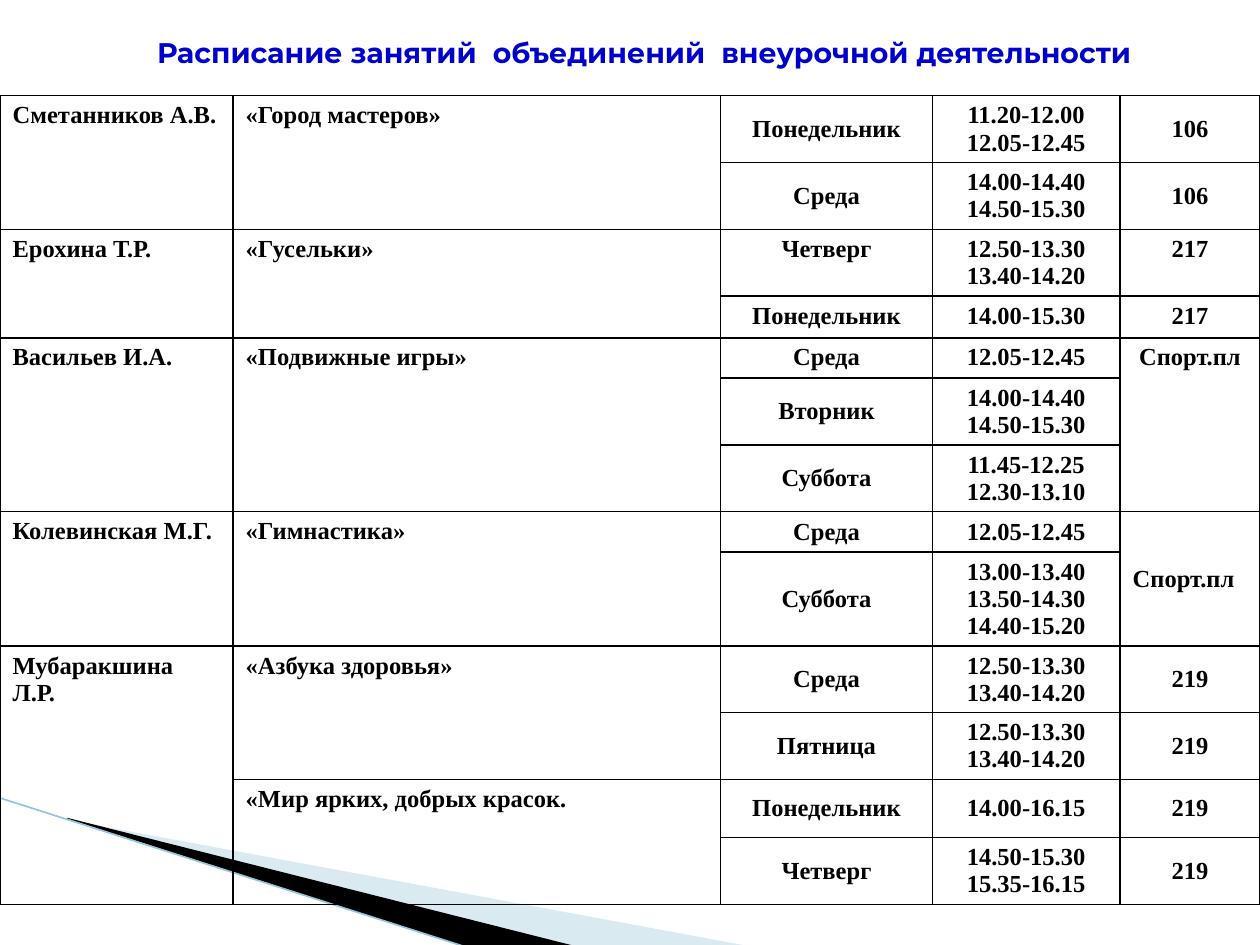
"""Build the timetable slide for after-school clubs."""
from lxml import etree
from pptx import Presentation
from pptx.dml.color import RGBColor
from pptx.enum import shapes, text
from pptx.oxml import ns
from pptx.util import Inches, Pt

THEME = {
    "head": "0000CC", "ink": "000000", "pale": "A0CBDC", "edge": "97C5D8",
    "head_font": "Montserrat", "body_font": "Times New Roman",
    "head_size": 16.2, "body_size": 14,
}
TITLE = "Расписание занятий  объединений  внеурочной деятельности"
COLS = [1.85, 3.87, 1.68, 1.49, 1.11]
SPORT = "Спорт.пл"
TOP_ROWS = {2, 3, 4}
NAME_COLS = {0, 1}
LEFT_ROOM = (7, 4)

ROWS = [
    (0.53, "Сметанников А.В.", "«Город мастеров»", "Понедельник", "11.20-12.00\n12.05-12.45", "106"),
    (0.53, None, None, "Среда", "14.00-14.40\n14.50-15.30", "106"),
    (0.53, "Ерохина Т.Р.", "«Гусельки»", "Четверг", "12.50-13.30\n13.40-14.20", "217"),
    (0.33, None, None, "Понедельник", "14.00-15.30", "217"),
    (0.32, "Васильев И.А.", "«Подвижные игры»", "Среда", "12.05-12.45", SPORT),
    (0.53, None, None, "Вторник", "14.00-14.40\n14.50-15.30", None),
    (0.53, None, None, "Суббота", "11.45-12.25\n12.30-13.10", None),
    (0.32, "Колевинская М.Г.", "«Гимнастика»", "Среда", "12.05-12.45", SPORT),
    (0.74, None, None, "Суббота", "13.00-13.40\n13.50-14.30\n14.40-15.20", None),
    (0.53, "Мубаракшина Л.Р.", "«Азбука здоровья»", "Среда", "12.50-13.30\n13.40-14.20", "219"),
    (0.53, None, None, "Пятница", "12.50-13.30\n13.40-14.20", "219"),
    (0.46, None, "«Мир ярких, добрых красок.", "Понедельник", "14.00-16.15", "219"),
    (0.53, None, None, "Четверг", "14.50-15.30\n15.35-16.15", "219"),
]
WEDGES = [
    ("pale", 40, [(0.55, 6.51), (5.95, 7.51), (4.56, 7.51), (0.55, 6.5)]),
    ("ink", 100, [(0.53, 6.49), (4.57, 7.51), (3.72, 7.52), (0.54, 6.5)]),
]
EDGE = [(-0.01, 6.33), (3.71, 7.52)]


def rgb(key):
    return RGBColor.from_string(THEME[key])


def style(para, kind, color, align):
    para.alignment = align
    for run in para.runs:
        font = run.font
        font.name = THEME[kind + "_font"]
        font.size = Pt(THEME[kind + "_size"])
        font.bold = True
        font.color.rgb = rgb(color)


def add_title(slide):
    box = slide.shapes.title
    box.left, box.top, box.width, box.height = map(Inches, (0.5, 0, 9.5, 0.61))
    frame = box.text_frame
    frame.text = TITLE
    frame.word_wrap = True
    frame.auto_size = text.MSO_AUTO_SIZE.NONE
    frame.vertical_anchor = text.MSO_ANCHOR.MIDDLE
    frame.margin_top, frame.margin_bottom = Inches(0.26), Inches(0.05)
    frame.margin_left, frame.margin_right = Inches(0.1), Inches(0.38)
    style(frame.paragraphs[0], "head", "head", text.PP_ALIGN.CENTER)


def add_decor(slide):
    for color, alpha, points in WEDGES:
        spots = [(Inches(x), Inches(y)) for x, y in points]
        pen = slide.shapes.build_freeform(*spots[0])
        pen.add_line_segments(spots[1:], close=True)
        wedge = pen.convert_to_shape()
        wedge.shadow.inherit = False
        wedge.line.fill.background()
        wedge.fill.solid()
        wedge.fill.fore_color.rgb = rgb(color)
        if alpha < 100:
            tone = wedge.fill._xPr.find(".//" + ns.qn("a:srgbClr"))
            etree.SubElement(tone, ns.qn("a:alpha"), val=str(alpha * 1000))
    ends = [Inches(v) for point in EDGE for v in point]
    line = slide.shapes.add_connector(shapes.MSO_CONNECTOR.STRAIGHT, *ends)
    line.line.color.rgb = rgb("edge")
    line.line.width = Pt(0.95)
    etree.SubElement(line._element.spPr, ns.qn("a:effectLst"))


def add_borders(cell):
    props = cell._tc.get_or_add_tcPr()
    for i, side in enumerate(("lnL", "lnR", "lnT", "lnB")):
        line = etree.Element(ns.qn("a:" + side), w=str(Pt(1)))
        fill = etree.SubElement(line, ns.qn("a:solidFill"))
        etree.SubElement(fill, ns.qn("a:srgbClr"), val=THEME["ink"])
        props.insert(i, line)


def add_grid(slide):
    high = sum(row[0] for row in ROWS)
    frame = slide.shapes.add_table(
        len(ROWS), len(COLS), 0, Inches(0.76), Inches(sum(COLS)), Inches(high))
    grid = frame.table
    grid.first_row = grid.horz_banding = False
    for col, width in zip(grid.columns, COLS):
        col.width = Inches(width)
    for r, (height, *words) in enumerate(ROWS):
        grid.rows[r].height = Inches(height)
        for c, word in enumerate(words):
            cell = grid.cell(r, c)
            cell.fill.background()
            add_borders(cell)
            if word is None:
                continue
            cell.text = word
            named = c in NAME_COLS
            high_up = named or r in TOP_ROWS
            cell.vertical_anchor = text.MSO_ANCHOR.TOP if high_up else text.MSO_ANCHOR.MIDDLE
            left = named or (r, c) == LEFT_ROOM
            for para in cell.text_frame.paragraphs:
                style(para, "body", "ink", text.PP_ALIGN.LEFT if left else text.PP_ALIGN.CENTER)
    for c in range(len(COLS)):
        starts = [r for r, row in enumerate(ROWS) if row[c + 1] is not None]
        for start, stop in zip(starts, starts[1:] + [len(ROWS)]):
            if stop - start > 1:
                grid.cell(start, c).merge(grid.cell(stop - 1, c))


def main():
    deck = Presentation()
    deck.slide_width, deck.slide_height = Inches(10), Inches(7.5)
    slide = deck.slides.add_slide(deck.slide_layouts[5])
    add_title(slide)
    add_decor(slide)
    add_grid(slide)
    deck.save("out.pptx")


if __name__ == "__main__":
    main()
